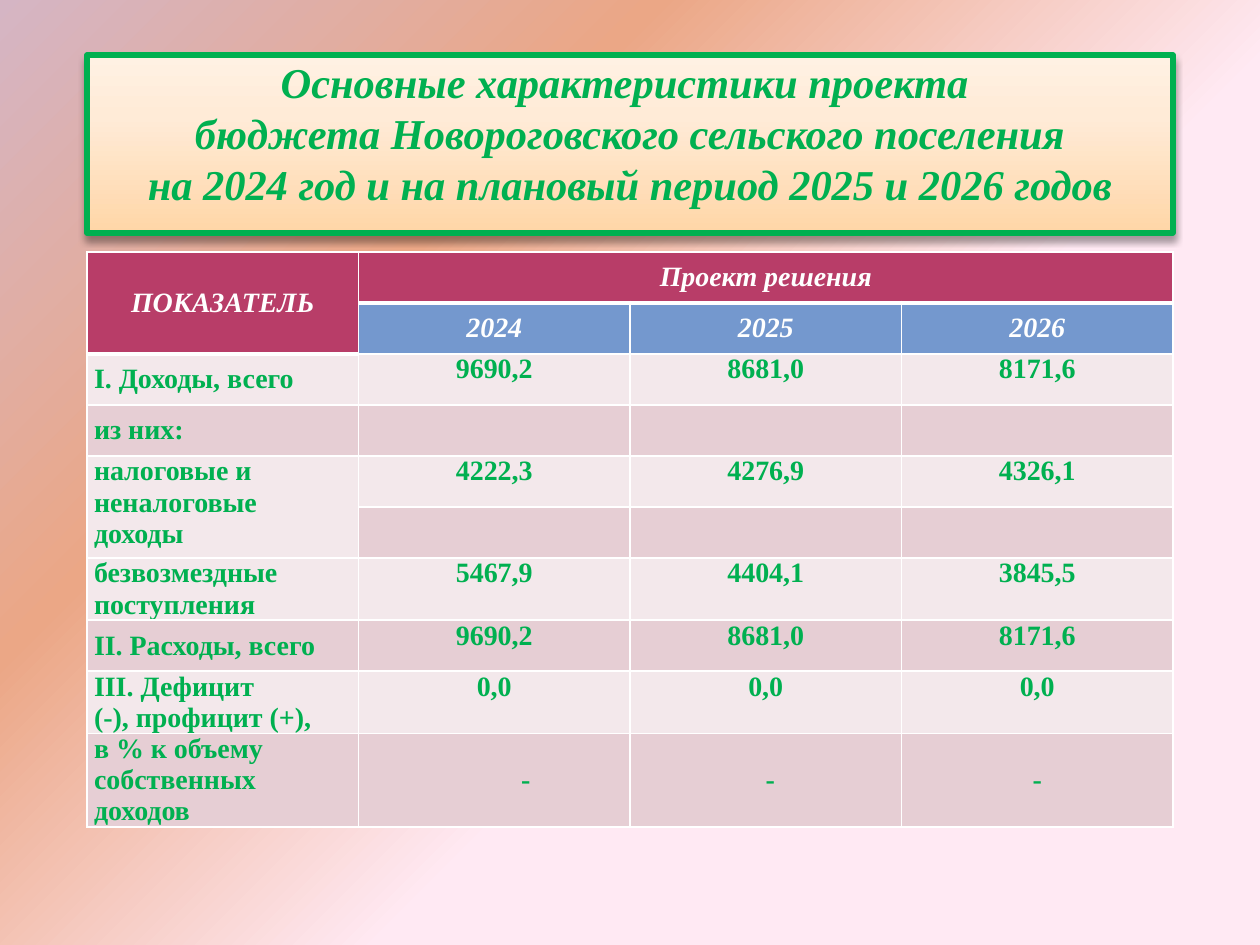
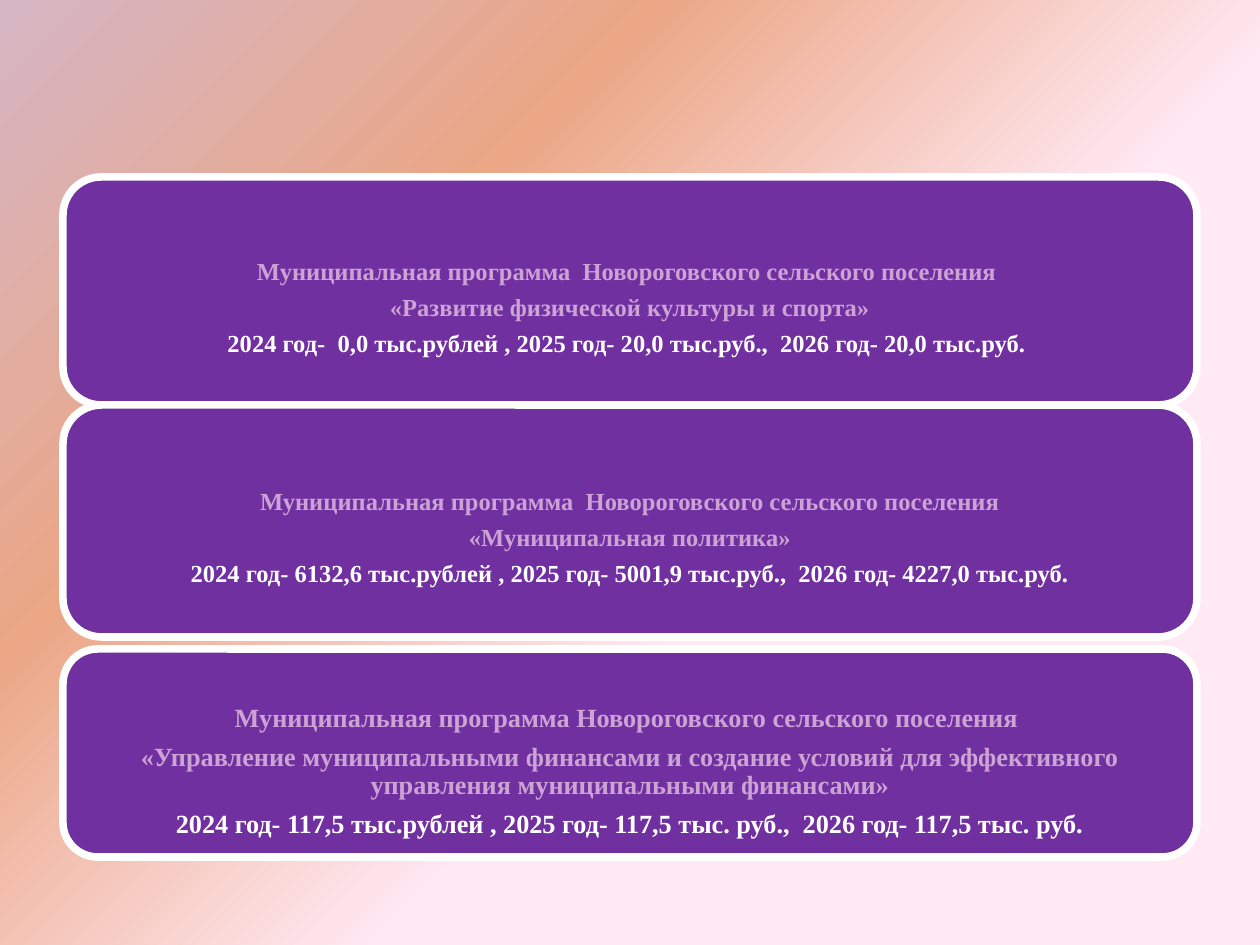
import dataclasses

import lxml.etree
import pptx
import pptx.dml.color
import pptx.enum.shapes
import pptx.enum.text
import pptx.oxml.ns
import pptx.util

# Content
TITLE_LINES = [
    "Основные характеристики проекта ",
    "бюджета Новороговского сельского поселения",
    "на 2024 год и на плановый период 2025 и 2026 годов",
]
TABLE_HEADER = ("ПОКАЗАТЕЛЬ", "Проект решения")
YEARS = ("2024", "2025", "2026")
# label lines, label centred vertically, yearly values, row height in px
BUDGET_ROWS = [
    (["I. Доходы, всего"], True, ("9690,2", "8681,0", "8171,6"), 51),
    (["из них:"], True, ("", "", ""), 51),
    (["налоговые и неналоговые доходы"], False, ("4222,3", "4276,9", "4326,1"), 51),
    ([], False, ("", "", ""), 51),
    (["безвозмездные поступления"], False, ("5467,9", "4404,1", "3845,5"), 62),
    (["II. Расходы, всего"], True, ("9690,2", "8681,0", "8171,6"), 51),
    (["III. Дефицит", "(-), профицит (+),"], False, ("0,0", "0,0", "0,0"), 62),
    (["в % к объему собственных доходов"], False, ("-", "-", "-"), 93),
]
DASH_INDENTS = (63, 9, 0)
# top, height, type size, heading lines, amounts
PROGRAMS = [
    (177, 228, 14,
     ["Муниципальная программа  Новороговского сельского поселения ",
      "«Развитие физической культуры и спорта»"],
     "2024 год-  0,0 тыс.рублей , 2025 год- 20,0 тыс.руб.,  2026 год- 20,0 тыс.руб. "),
    (405, 232, 14,
     ["Муниципальная программа  Новороговского сельского поселения",
      "«Муниципальная политика»"],
     "2024 год- 6132,6 тыс.рублей , 2025 год- 5001,9 тыс.руб.,  2026 год- 4227,0 тыс.руб."),
    (649, 208, 15,
     ["Муниципальная программа Новороговского сельского поселения ",
      "«Управление муниципальными финансами и создание условий для эффективного "
      "управления муниципальными финансами»"],
     "2024 год- 117,5 тыс.рублей , 2025 год- 117,5 тыс. руб.,  2026 год- 117,5 тыс. руб."),
]


@dataclasses.dataclass(frozen=True)
class Theme:
    font: str = "Times New Roman"
    green: str = "00B050"
    white: str = "FFFFFF"
    crimson: str = "B83D68"
    blue: str = "7498CE"
    bands: tuple = ("F3E8EB", "E6CED4")
    purple: str = "7030A0"
    lilac: str = "CDA3D6"
    page_stops: tuple = ((0, "FFE9F3"), (40, "FFE9F3"), (70, "EBA786"), (100, "D5B5C4"))
    title_stops: tuple = ((0, "FFD6A7"), (65, "FFEBD7"), (100, "FFF1E3"))
    title_size: float = 24.3
    title_pitch: float = 29.14
    table_size: int = 16


THEME = Theme()
MIDDLE = pptx.enum.text.MSO_ANCHOR.MIDDLE
TOP = pptx.enum.text.MSO_ANCHOR.TOP
CENTER = pptx.enum.text.PP_ALIGN.CENTER
LEFT = pptx.enum.text.PP_ALIGN.LEFT
SHAPES = pptx.enum.shapes.MSO_SHAPE


def px(length):
    return pptx.util.Emu(round(length * 914400 / 126))


def rgb(color):
    return pptx.dml.color.RGBColor.from_string(color)


def add_node(parent, tag, **attributes):
    node = lxml.etree.SubElement(parent, pptx.oxml.ns.qn(tag))
    for name, value in attributes.items():
        node.set(name, str(value))
    return node


def paint_gradient(fill, holder, stops, angle=None):
    """Linear at an angle, or circular from the bottom right corner."""
    fill.gradient()
    gradient = holder.find(".//" + pptx.oxml.ns.qn("a:gradFill"))
    for child in list(gradient):
        gradient.remove(child)
    stop_list = add_node(gradient, "a:gsLst")
    for position, color in stops:
        stop = add_node(stop_list, "a:gs", pos=position * 1000)
        add_node(stop, "a:srgbClr", val=color)
    if angle is not None:
        add_node(gradient, "a:lin", ang=angle * 60000, scaled=0)
    else:
        circle = add_node(gradient, "a:path", path="circle")
        add_node(circle, "a:fillToRect", l=100000, t=100000)


def set_margins(target, left, top, right, bottom):
    target.margin_left, target.margin_top = px(left), px(top)
    target.margin_right, target.margin_bottom = px(right), px(bottom)


def write(frame, lines, size, colors, align=CENTER, italic=False, spacing=None, after=0):
    frame.word_wrap = True
    for index, (line, color) in enumerate(zip(lines, colors)):
        para = frame.paragraphs[0] if index == 0 else frame.add_paragraph()
        para.alignment = align
        para.space_after = pptx.util.Pt(after)
        if spacing:
            para.line_spacing = spacing
        span = para.add_run()
        span.text = line
        span.font.name = THEME.font
        span.font.size = pptx.util.Pt(size)
        span.font.bold = True
        span.font.italic = italic
        span.font.color.rgb = rgb(color)


def add_box(page, kind, left, top, width, height, line_color, line_width):
    box = page.shapes.add_shape(kind, px(left), px(top), px(width), px(height))
    box.shadow.inherit = False
    box.line.color.rgb = rgb(line_color)
    box.line.width = pptx.util.Pt(line_width)
    return box


def add_title(page):
    box = add_box(page, SHAPES.RECTANGLE, 87, 55, 1086, 178, THEME.green, 3)
    properties = box._element.spPr
    paint_gradient(box.fill, properties, THEME.title_stops, angle=270)
    effects = properties.find(pptx.oxml.ns.qn("a:effectLst"))
    shadow = add_node(effects, "a:outerShdw", blurRad=50800, dist=38100,
                      dir=5400000, rotWithShape=0)
    add_node(add_node(shadow, "a:srgbClr", val="000000"), "a:alpha", val=35000)
    frame = box.text_frame
    frame.vertical_anchor = TOP
    set_margins(frame, 12, 1, 12, 0)
    write(frame, TITLE_LINES, THEME.title_size, [THEME.green] * len(TITLE_LINES),
          italic=True, spacing=pptx.util.Pt(THEME.title_pitch))


def style_cell(cell, fill, lines, color, align=CENTER, anchor=MIDDLE, header=False, thick=False):
    cell.fill.solid()
    cell.fill.fore_color.rgb = rgb(fill)
    cell.vertical_anchor = anchor
    set_margins(cell, *((9, 6, 9, 6) if header else (7, 0, 7, 0)))
    write(cell.text_frame, [line for line in lines if line], THEME.table_size,
          [color] * len(lines), align, italic=header)
    # White cell borders come before the fill
    properties = cell._tc.get_or_add_tcPr()
    for index, side in enumerate("LRTB"):
        points = 3 if thick and side == "B" else 1
        border = add_node(properties, "a:ln" + side, w=points * 12700)
        add_node(add_node(border, "a:solidFill"), "a:srgbClr", val=THEME.white)
        properties.insert(index, border)


def add_budget_table(page):
    heights = [51, 51] + [row[-1] for row in BUDGET_ROWS]
    columns = len(YEARS) + 1
    frame = page.shapes.add_table(len(heights), columns, px(87), px(252),
                                  px(1086), px(sum(heights)))
    table = frame.table
    for column in table.columns:
        column.width = px(1086 / columns)
    for row, height in zip(table.rows, heights):
        row.height = px(height)

    # Header rows
    for column in range(columns):
        text = TABLE_HEADER[column] if column < 2 else ""
        style_cell(table.cell(0, column), THEME.crimson, [text], THEME.white,
                   header=True, thick=True)
        year = YEARS[column - 1] if column else ""
        style_cell(table.cell(1, column), THEME.blue if column else THEME.crimson,
                   [year], THEME.white, header=True, thick=column == 0)

    # Budget rows
    for index, (label, centred, values, _) in enumerate(BUDGET_ROWS):
        band = THEME.bands[index % 2]
        style_cell(table.cell(index + 2, 0), band, label, THEME.green, LEFT,
                   MIDDLE if centred else TOP)
        for column, value in enumerate(values, 1):
            cell = table.cell(index + 2, column)
            dash = value == "-"
            style_cell(cell, band, [value], THEME.green, anchor=MIDDLE if dash else TOP)
            if dash:
                para = cell.text_frame.paragraphs[0]
                para._p.get_or_add_pPr().set("indent", str(px(DASH_INDENTS[column - 1])))

    for first, last in (((0, 0), (1, 0)), ((0, 1), (0, 3)), ((4, 0), (5, 0))):
        table.cell(*first).merge(table.cell(*last))


def add_program(page, top, height, size, heading, amounts):
    box = add_box(page, SHAPES.ROUNDED_RECTANGLE, 63, top, 1134, height, THEME.white, 4.33)
    box.fill.solid()
    box.fill.fore_color.rgb = rgb(THEME.purple)
    frame = box.text_frame
    frame.vertical_anchor = MIDDLE
    # The text sits one line below the middle
    set_margins(frame, 8, 8 + 2.5 * size, 8, 8)
    write(frame, heading + [amounts], size, [THEME.lilac] * len(heading) + [THEME.white],
          spacing=0.9, after=round(size * 0.39, 1))


def main():
    deck = pptx.Presentation()
    deck.slide_width, deck.slide_height = px(1260), px(945)
    master = deck.slide_master
    paint_gradient(master.background.fill, master._element.cSld, THEME.page_stops)
    blank = deck.slide_layouts[6]

    # Budget summary
    page = deck.slides.add_slide(blank)
    add_title(page)
    add_budget_table(page)

    # Municipal programs
    page = deck.slides.add_slide(blank)
    for program in PROGRAMS:
        add_program(page, *program)

    deck.save("out.pptx")


if __name__ == "__main__":
    main()
